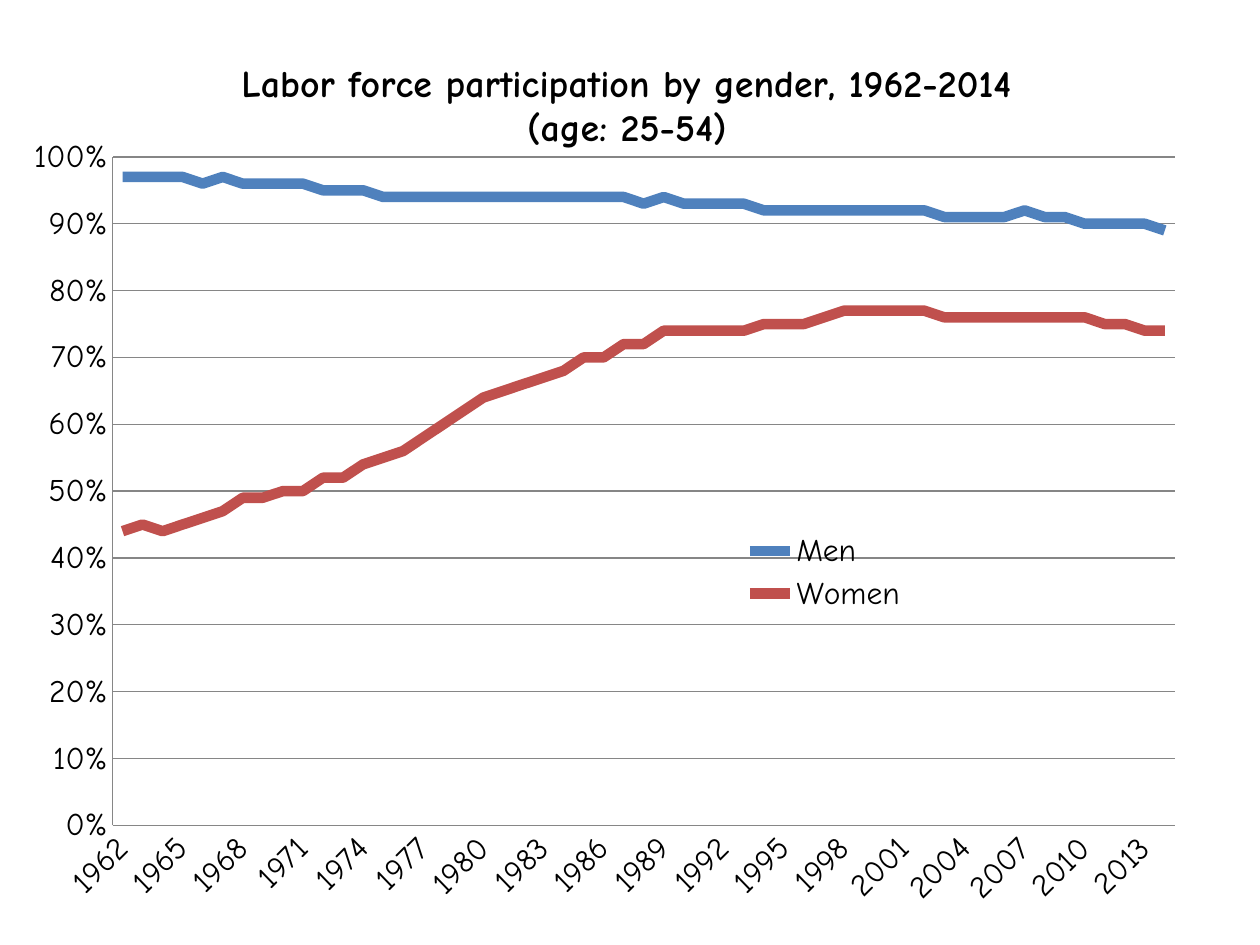
from dataclasses import dataclass

from lxml import etree
from pptx import Presentation, util as u
from pptx.chart import data as chart_data
from pptx.dml import color
from pptx.enum import chart as ce
from pptx.oxml import ns

TITLE = ("Labor force participation by gender, 1962-2014", "(age: 25-54)")
FIRST_YEAR = 1962
PERCENT = {
    "Men": [
        97, 97, 97, 97, 96, 97, 96, 96, 96, 96, 95, 95, 95, 94, 94, 94, 94, 94,
        94, 94, 94, 94, 94, 94, 94, 94, 93, 94, 93, 93, 93, 93, 92, 92, 92, 92,
        92, 92, 92, 92, 92, 91, 91, 91, 91, 92, 91, 91, 90, 90, 90, 90, 89,
    ],
    "Women": [
        44, 45, 44, 45, 46, 47, 49, 49, 50, 50, 52, 52, 54, 55, 56, 58, 60, 62,
        64, 65, 66, 67, 68, 70, 70, 72, 72, 74, 74, 74, 74, 74, 75, 75, 75, 76,
        77, 77, 77, 77, 77, 76, 76, 76, 76, 76, 76, 76, 76, 75, 75, 74, 74,
    ],
}


@dataclass(frozen=True)
class Theme:
    font: str = "Comic Neue"
    text: str = "000000"
    grid: str = "868686"
    men: str = "4F81BD"
    women: str = "C0504D"
    body_size: float = 18
    title_size: float = 21.6
    grid_width: float = 0.75
    series_width: float = 6


THEME = Theme()


def style_font(font, size, bold=False):
    font.name = THEME.font
    font.size = u.Pt(size)
    font.bold = bold
    font.color.rgb = color.RGBColor.from_string(THEME.text)


def style_line(line, rgb, width):
    line.color.rgb = color.RGBColor.from_string(rgb)
    line.width = u.Pt(width)


def add_text(frame, lines, **style):
    for index, line in enumerate(lines):
        para = frame.paragraphs[0] if index == 0 else frame.add_paragraph()
        span = para.add_run()
        span.text = line
        style_font(span.font, **style)


def place(part, index, **settings):
    """Give a chart part a manual layout, in fractions of the chart, as child number index."""
    for old in part.findall(ns.qn("c:layout")):
        part.remove(old)
    layout = etree.Element(ns.qn("c:layout"))
    manual = etree.SubElement(layout, ns.qn("c:manualLayout"))
    for name, value in settings.items():
        etree.SubElement(manual, ns.qn(f"c:{name}")).set("val", str(value))
    part.insert(index, layout)


def format_axes(chart):
    years, share = chart.category_axis, chart.value_axis
    for axis in (years, share):
        axis.major_tick_mark = axis.minor_tick_mark = ce.XL_TICK_MARK.NONE
        style_font(axis.tick_labels.font, THEME.body_size)
        style_line(axis.format.line, THEME.grid, THEME.grid_width)
    share.minimum_scale, share.maximum_scale, share.major_unit = 0, 1, 0.1
    share.tick_labels.number_format = "0%"
    share.tick_labels.number_format_is_linked = False
    share.has_major_gridlines = True
    style_line(share.major_gridlines.format.line, THEME.grid, THEME.grid_width)

    # Slanted labels, one for every third year
    chart.element.xpath(".//c:catAx/c:txPr/a:bodyPr")[0].set("rot", "-2700000")
    skip = etree.Element(ns.qn("c:tickLblSkip"))
    skip.set("val", "3")
    chart.element.xpath(".//c:catAx/c:noMultiLvlLbl")[0].addprevious(skip)


def add_participation_chart(page):
    data = chart_data.CategoryChartData(number_format="0%")
    count = len(PERCENT["Men"])
    data.categories = [str(FIRST_YEAR + step) for step in range(count)]
    for name, values in PERCENT.items():
        data.add_series(name, [value / 100 for value in values])
    chart = page.shapes.add_chart(
        ce.XL_CHART_TYPE.LINE, u.Inches(0), u.Inches(0.17),
        u.Inches(9.92), u.Inches(7.17), data,
    ).chart
    style_font(chart.font, THEME.body_size)

    plot = chart.plots[0]
    plot.vary_by_categories = False
    for series, rgb in zip(plot.series, (THEME.men, THEME.women)):
        series.smooth = False
        series.marker.style = ce.XL_MARKER_STYLE.NONE
        style_line(series.format.line, rgb, THEME.series_width)
    format_axes(chart)

    chart.has_title = True
    add_text(chart.chart_title.text_frame, TITLE, size=THEME.title_size, bold=True)
    chart.has_legend = True
    chart.legend.position = ce.XL_LEGEND_POSITION.RIGHT
    chart.legend.include_in_layout = False
    style_font(chart.legend.font, THEME.body_size)

    find = chart.element.xpath
    place(find(".//c:chart/c:title")[0], 1, xMode="edge", yMode="edge", x=0.19, y=0.04)
    place(find(".//c:legend")[0], 1, xMode="edge", yMode="edge",
          x=0.59, y=0.56, w=0.14, h=0.1)
    place(find(".//c:plotArea")[0], 0, layoutTarget="inner", xMode="edge", yMode="edge",
          x=0.09, y=0.15, w=0.85, h=0.74)


def main():
    deck = Presentation()
    deck.slide_width, deck.slide_height = u.Inches(10), u.Inches(7.5)
    page = deck.slides.add_slide(deck.slide_layouts[6])
    add_participation_chart(page)
    deck.save("out.pptx")


if __name__ == "__main__":
    main()
